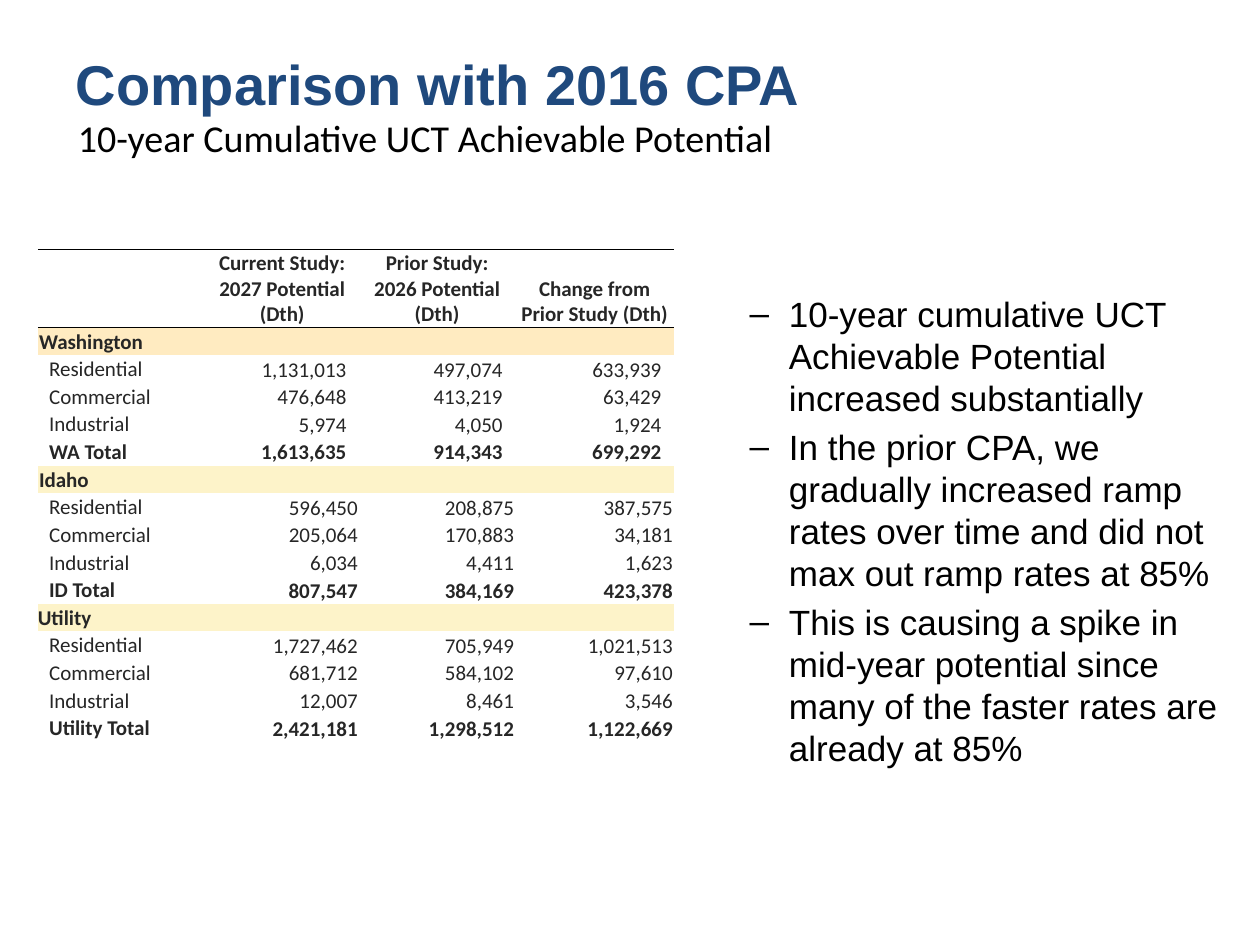
from dataclasses import dataclass

from lxml import etree
from pptx import Presentation
from pptx.dml.color import RGBColor
from pptx.enum.text import MSO_ANCHOR, MSO_AUTO_SIZE, PP_ALIGN
from pptx.oxml.ns import qn
from pptx.util import Pt

TOP, MIDDLE, BOTTOM = MSO_ANCHOR.TOP, MSO_ANCHOR.MIDDLE, MSO_ANCHOR.BOTTOM
LEFT, CENTER, RIGHT = PP_ALIGN.LEFT, PP_ALIGN.CENTER, PP_ALIGN.RIGHT
NO_AUTOFIT = MSO_AUTO_SIZE.NONE
PLAIN_TABLE = "{2D5ABB26-0587-4C30-8999-92F81FD0307C}"


@dataclass(frozen=True)
class Theme:
    heading_font: str = "Arial"
    table_font: str = "Calibri"
    title_color: str = "1F497D"
    text_color: str = "000000"
    table_color: str = "262626"
    rule_color: str = "000000"
    orange_band: str = "FFEBC1"
    yellow_band: str = "FDF3C9"
    title_size: float = 32
    subtitle_size: float = 21.7
    bullet_size: float = 20
    table_size: float = 12


@dataclass(frozen=True)
class Region:
    name: str
    band: str
    name_inset: float
    number_inset: float
    rows: tuple[tuple[str, ...], ...]


@dataclass(frozen=True)
class Box:
    left: float
    top: float
    width: float
    height: float

    def lengths(self):
        return Pt(self.left), Pt(self.top), Pt(self.width), Pt(self.height)


THEME = Theme()
TITLE_BOX = Box(36, 21.6, 648, 90)
SUBTITLE_BOX = Box(37.44, 61.92, 646.56, 30.24)
TABLE_BOX = Box(21.6, 142.5, 363.6, 281.5)
BULLET_BOX = Box(385.2, 163.44, 325.44, 327.6)
COLUMN_WIDTHS = (95.76, 87.84, 89.28, 90.72)
HEADER_HEIGHT, ROW_HEIGHT = 44.5, 15.8
CELL_INSET, LABEL_INSET = 0.72, 6.48

HEADERS = (
    "",
    "Current Study:\v2027 Potential (Dth)",
    "Prior Study:\v2026 Potential (Dth)",
    "Change from Prior Study (Dth)",
)
REGIONS = (
    Region("Washington", THEME.orange_band, 0.72, 7.2, (
        ("Residential", "1,131,013", "497,074", "633,939"),
        ("Commercial", "476,648", "413,219", "63,429"),
        ("Industrial", "5,974", "4,050", "1,924"),
        ("WA Total", "1,613,635", "914,343", "699,292"),
    )),
    Region("Idaho", THEME.yellow_band, 0.72, 0.72, (
        ("Residential", "596,450", "208,875", "387,575"),
        ("Commercial", "205,064", "170,883", "34,181"),
        ("Industrial", "6,034", "4,411", "1,623"),
        ("ID Total", "807,547", "384,169", "423,378"),
    )),
    Region("Utility", THEME.yellow_band, 0, 0.72, (
        ("Residential", "1,727,462", "705,949", "1,021,513"),
        ("Commercial", "681,712", "584,102", "97,610"),
        ("Industrial", "12,007", "8,461", "3,546"),
        ("Utility Total", "2,421,181", "1,298,512", "1,122,669"),
    )),
)
BULLETS = (
    "10-year cumulative UCT Achievable Potential increased substantially",
    "In the prior CPA, we gradually increased ramp rates over time and did not "
    "max out ramp rates at 85%",
    "This is causing a spike in mid-year potential since many of the faster "
    "rates are already at 85%",
)


def write(p, text: str, *, font: str, size: float, color: str,
          bold: bool = False, align=LEFT) -> None:
    p.alignment = align
    for i, line in enumerate(text.split("\v")):
        if i:
            p.add_line_break()
        r = p.add_run()
        r.text = line
        r.font.name = font
        r.font.size = Pt(size)
        r.font.bold = bold
        r.font.color.rgb = RGBColor.from_string(color)


def add_bullet(p, char: str, indent: float, hanging: float) -> None:
    pPr = p._p.get_or_add_pPr()
    pPr.set("marL", str(Pt(indent)))
    pPr.set("indent", str(Pt(-hanging)))
    etree.SubElement(pPr, qn("a:buFont"), typeface=THEME.heading_font)
    etree.SubElement(pPr, qn("a:buChar"), char=char)


def add_text_box(s, box: Box):
    tf = s.shapes.add_textbox(*box.lengths()).text_frame
    tf.word_wrap = True
    return tf


def add_rules(cell, *edges: str) -> None:
    tcPr = cell._tc.get_or_add_tcPr()
    for edge in edges:
        ln = etree.SubElement(tcPr, qn(f"a:{edge}"), w=str(Pt(0.5)))
        fill = etree.SubElement(ln, qn("a:solidFill"))
        etree.SubElement(fill, qn("a:srgbClr"), val=THEME.rule_color)


def fill_cell(cell, text: str, *, bold: bool, align=LEFT, anchor=MIDDLE,
              left: float = CELL_INSET, right: float = CELL_INSET,
              band: str = "", rules: tuple[str, ...] = ()) -> None:
    cell.margin_left, cell.margin_right = Pt(left), Pt(right)
    cell.margin_top, cell.margin_bottom = Pt(CELL_INSET), 0
    cell.vertical_anchor = anchor
    add_rules(cell, *rules)
    if band:
        cell.fill.solid()
        cell.fill.fore_color.rgb = RGBColor.from_string(band)
    else:
        cell.fill.background()
    p = cell.text_frame.paragraphs[0]
    if text:
        write(p, text, font=THEME.table_font, size=THEME.table_size,
              color=THEME.table_color, bold=bold, align=align)
    else:
        end = etree.SubElement(p._p, qn("a:endParaRPr"))
        end.set("sz", str(int(THEME.table_size * 100)))


def add_potential_table(s) -> None:
    row_count = 1 + sum(1 + len(region.rows) for region in REGIONS)
    frame = s.shapes.add_table(row_count, len(HEADERS), *TABLE_BOX.lengths())
    table = frame.table
    table.first_row = table.horz_banding = False
    table._tbl.tblPr.find(qn("a:tableStyleId")).text = PLAIN_TABLE
    for column, width in zip(table.columns, COLUMN_WIDTHS):
        column.width = Pt(width)
    for i, row in enumerate(table.rows):
        row.height = Pt(ROW_HEIGHT if i else HEADER_HEIGHT)

    rows = iter(table.rows)
    for cell, text in zip(next(rows).cells, HEADERS):
        fill_cell(cell, text, bold=True, align=CENTER, anchor=BOTTOM,
                  rules=("lnT", "lnB"))
    for region in REGIONS:
        for i, cell in enumerate(next(rows).cells):
            fill_cell(cell, "" if i else region.name, bold=True,
                      left=region.name_inset, band=region.band)
        for label, *numbers in region.rows:
            bold = label.endswith("Total")
            label_cell, *number_cells = next(rows).cells
            fill_cell(label_cell, label, bold=bold, left=LABEL_INSET)
            for cell, number in zip(number_cells, numbers):
                fill_cell(cell, number, bold=bold, align=RIGHT, anchor=BOTTOM,
                          right=region.number_inset)


def add_title(s) -> None:
    sp = s.shapes.title
    sp.left, sp.top, sp.width, sp.height = TITLE_BOX.lengths()
    tf = sp.text_frame
    tf.auto_size = NO_AUTOFIT
    tf.vertical_anchor = TOP
    tf.margin_top = Pt(6.5)
    write(tf.paragraphs[0], "Comparison with 2016 CPA", font=THEME.heading_font,
          size=THEME.title_size, color=THEME.title_color, bold=True)


def add_bullets(s) -> None:
    tf = add_text_box(s, BULLET_BOX)
    for i, text in enumerate(BULLETS):
        p = tf.add_paragraph() if i else tf.paragraphs[0]
        add_bullet(p, "–", 58.5, 22.5)
        if i:
            p.space_before = Pt(4)
        write(p, text, font=THEME.heading_font, size=THEME.bullet_size,
              color=THEME.text_color)


def main() -> None:
    prs = Presentation()
    prs.slide_width, prs.slide_height = Pt(720), Pt(540)
    s = prs.slides.add_slide(prs.slide_layouts.get_by_name("Title Only"))
    add_title(s)
    add_potential_table(s)
    add_bullets(s)
    write(add_text_box(s, SUBTITLE_BOX).paragraphs[0],
          "10-year Cumulative UCT Achievable Potential", font=THEME.table_font,
          size=THEME.subtitle_size, color=THEME.text_color)
    prs.save("out.pptx")


if __name__ == "__main__":
    main()
